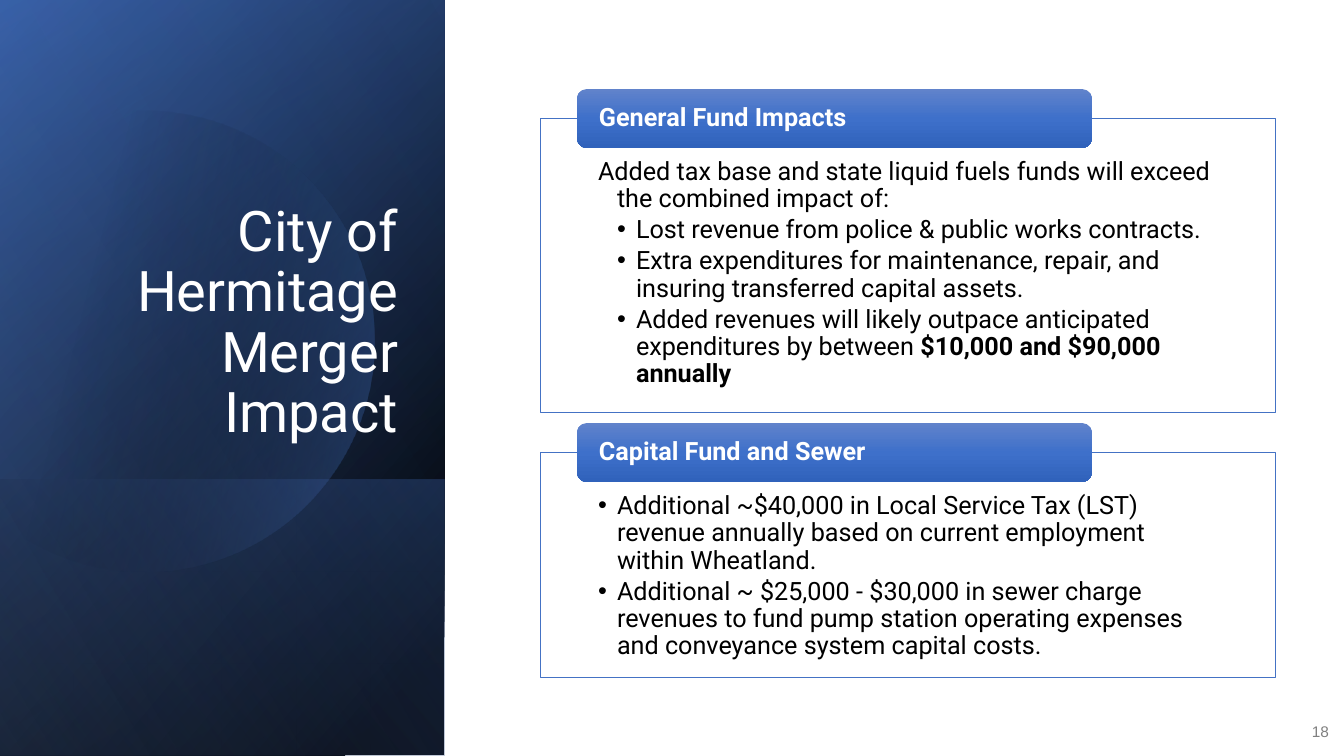
import math
from lxml import etree
from pptx import Presentation
from pptx import util as u
from pptx.dml.color import RGBColor
from pptx.enum import shapes, text
from pptx.oxml import ns

SCALE = 914400 / 100.8
COLORS = {"white": "FFFFFF", "black": "000000", "gray": "808080", "navy": "2F5597",
          "blue": "4472C4", "pale": "8FAADC", "tab_top": "6183CB",
          "tab_mid": "3E70CA", "tab_end": "3062BB"}


def px(n):
    return u.Emu(round(n * SCALE))


class Deck:
    def __init__(self, prs, s):
        self.prs, self.s = prs, s

    def color(self, name):
        return RGBColor.from_string(COLORS[name])

    def set_all(self, obj, values):
        for name, value in values.items():
            setattr(obj, name, value)

    def gradient(self, sp, stops, angle):
        sp.shadow.inherit = False
        sp.line.fill.background()
        sp.fill.background()
        grad = etree.Element(ns.qn("a:gradFill"), rotWithShape="1")
        stop_list = etree.SubElement(grad, ns.qn("a:gsLst"))
        for pos, name, alpha in stops:
            gs = etree.SubElement(stop_list, ns.qn("a:gs"), pos=str(pos * 1000))
            clr = etree.SubElement(gs, ns.qn("a:srgbClr"), val=COLORS[name])
            if alpha < 100:
                etree.SubElement(clr, ns.qn("a:alpha"), val=str(alpha * 1000))
        etree.SubElement(grad, ns.qn("a:lin"), ang=str(angle * 60000), scaled="0")
        spPr = sp._element.spPr
        spPr.replace(spPr.find(ns.qn("a:noFill")), grad)

    def shape(self, kind, x, y, w, h):
        return self.s.shapes.add_shape(kind, px(x), px(y), px(w), px(h))

    def panel(self, top, width, height, stops, angle):
        x, y = (width - height) // 2, top + (height - width) // 2
        sp = self.shape(shapes.MSO_SHAPE.RECTANGLE, x, y, height, width)
        sp.rotation = 90
        sp._element.spPr.find(ns.qn("a:xfrm")).set("flipH", "1")
        self.gradient(sp, stops, angle)

    def disc(self, cx, cy, radius, sweep, stops, angle):
        def point(degrees, tangent=0):
            c, s = math.cos(math.radians(degrees)), math.sin(math.radians(degrees))
            return px(cx + radius * (c - tangent * s)), px(cy + radius * (s + tangent * c))

        knots = [-sweep, -90, 0, 90, sweep]
        points = []
        for a, b in zip(knots, knots[1:]):
            reach = 4 / 3 * math.tan(math.radians(b - a) / 4)
            points += [point(a, reach), point(b, -reach), point(b)]
        builder = self.s.shapes.build_freeform(*point(-sweep))
        builder.add_line_segments(points, close=True)
        sp = builder.convert_to_shape()
        lines = list(sp._element.iter(ns.qn("a:lnTo")))
        for i in range(0, len(points), 3):
            curve = etree.Element(ns.qn("a:cubicBezTo"))
            lines[i].addprevious(curve)
            for line in lines[i:i + 3]:
                curve.append(line[0])
                line.getparent().remove(line)
        self.gradient(sp, stops, angle)

    def frame(self, x, y, w, h, insets, anchor):
        tf = self.s.shapes.add_textbox(px(x), px(y), px(w), px(h)).text_frame
        sides = ("margin_left", "margin_top", "margin_right", "margin_bottom")
        self.set_all(tf, dict(zip(sides, map(px, insets)), word_wrap=True, vertical_anchor=anchor))
        return tf

    def paragraph(self, p, runs, size, color, font="Roboto", align=text.PP_ALIGN.LEFT,
                  spacing=0.9, after=0, indent=0, bullet=False):
        self.set_all(p, {"alignment": align, "line_spacing": spacing, "space_after": u.Pt(after)})
        if indent:
            pPr = p._p.get_or_add_pPr()
            pPr.set("marL", str(px(indent)))
            pPr.set("indent", str(px(-19)))
            if bullet:
                etree.SubElement(pPr, ns.qn("a:buFont"), typeface="Arial")
                etree.SubElement(pPr, ns.qn("a:buChar"), char="•")
        for words, bold in runs:
            r = p.add_run()
            r.text = words
            self.set_all(r.font, {"size": u.Pt(size), "name": font, "bold": bold})
            r.font.color.rgb = self.color(color)

    def label(self, x, y, w, h, words, size, color, anchor, **style):
        tf = self.frame(x, y, w, h, (10, 5, 10, 5), anchor)
        self.paragraph(tf.paragraphs[0], [(words, False)], size, color,
                       align=text.PP_ALIGN.RIGHT, **style)

    def card(self, top, height, heading, items):
        box = (540, top, 735, height)
        sp = self.shape(shapes.MSO_SHAPE.RECTANGLE, *box)
        sp.shadow.inherit = False
        sp.fill.solid()
        sp.fill.fore_color.rgb = self.color("white")
        sp.line.color.rgb = self.color("blue")
        sp.line.width = u.Pt(0.5)
        tf = self.frame(*box, (58, 41, 57, 14), text.MSO_ANCHOR.TOP)
        for i, (level, bullet, runs) in enumerate(items):
            p = tf.add_paragraph() if i else tf.paragraphs[0]
            self.paragraph(p, runs, 18, "black", after=2.7, indent=19 * level, bullet=bullet)
        tab = self.shape(shapes.MSO_SHAPE.ROUNDED_RECTANGLE, 577, top - 29, 515, 59)
        self.gradient(tab, [(0, "tab_top", 100), (50, "tab_mid", 100), (100, "tab_end", 100)], 90)
        tf = self.frame(580, top - 26, 509, 53, (19, 0, 19, 0), text.MSO_ANCHOR.MIDDLE)
        self.paragraph(tf.paragraphs[0], [(heading, True)], 18, "white")


def main():
    prs = Presentation()
    prs.slide_width, prs.slide_height = px(1344), px(756)
    deck = Deck(prs, prs.slides.add_slide(prs.slide_layouts[6]))

    deck.panel(0, 445, 756, [(8, "black", 100), (100, "navy", 100)], 50)
    deck.panel(0, 445, 756, [(0, "black", 0), (99, "blue", 46)], 30)
    deck.panel(480, 445, 276, [(2, "blue", 29), (100, "black", 30)], 130)
    deck.disc(144, 341, 230, 134, [(29, "black", 0), (100, "blue", 43)], 14)
    deck.panel(0, 445, 756, [(0, "black", 0), (99, "pale", 11)], 120)

    deck.label(64, 186, 344, 264, "City of Hermitage Merger Impact", 40, "white",
               text.MSO_ANCHOR.BOTTOM)
    deck.label(1290, 711, 49, 40, "18", 11, "gray", text.MSO_ANCHOR.MIDDLE,
               font="Arial", spacing=1.0, after=6)

    deck.card(118, 294, "General Fund Impacts", [
        (1, False, [("Added tax base and state liquid fuels funds will exceed "
                     "the combined impact of:", False)]),
        (2, True, [("Lost revenue from police & public works contracts.", False)]),
        (2, True, [("Extra expenditures for maintenance, repair, and "
                    "insuring transferred capital assets.", False)]),
        (2, True, [("Added revenues will likely outpace anticipated "
                    "expenditures by between ", False),
                   ("$10,000 and $90,000 annually", True)]),
    ])
    deck.card(452, 225, "Capital Fund and Sewer", [
        (1, True, [("Additional ~$40,000 in Local Service Tax (LST) revenue annually "
                    "based on current employment within Wheatland.", False)]),
        (1, True, [("Additional ~ $25,000 - $30,000 in sewer charge revenues to fund pump "
                    "station operating expenses and conveyance system capital costs.", False)]),
    ])
    prs.save("out.pptx")


if __name__ == "__main__":
    main()
